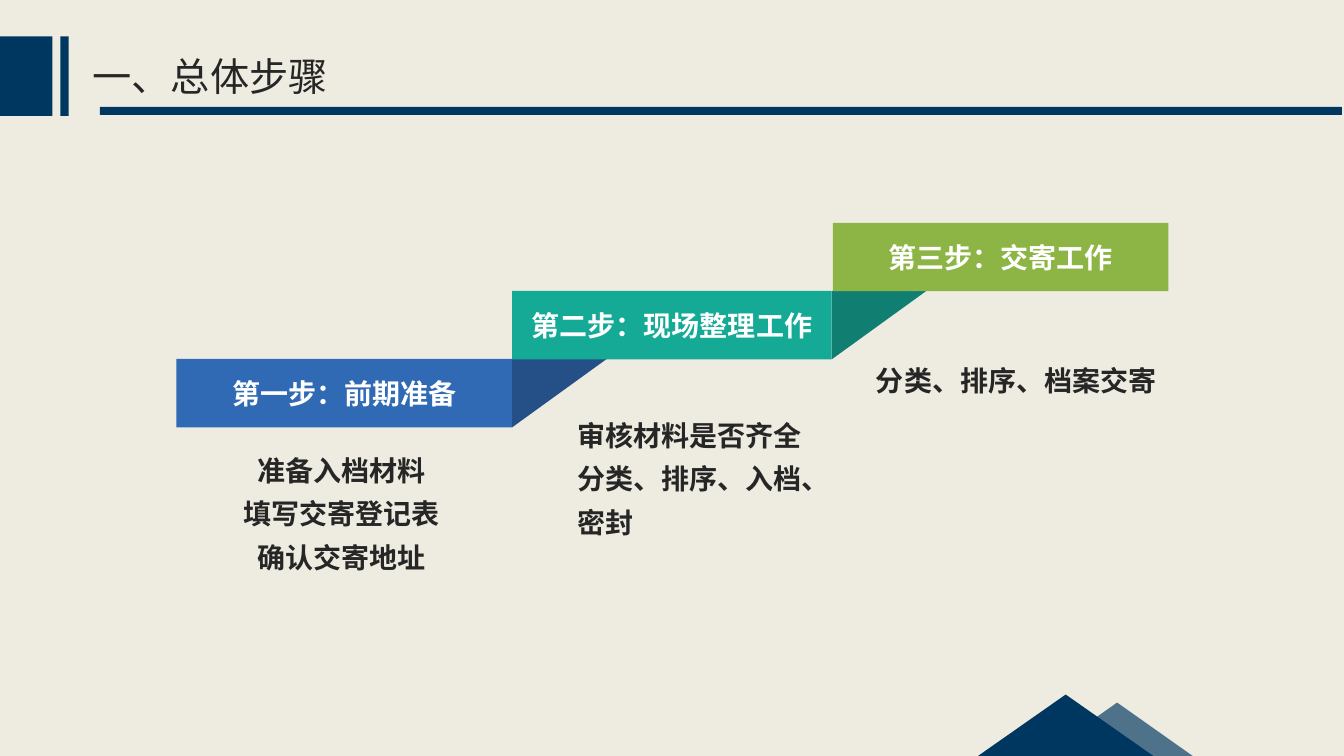
import pptx
import pptx.util
import pptx.dml.color
import pptx.enum.shapes
import pptx.enum.text
import pptx.oxml
import pptx.oxml.ns

Inches = pptx.util.Inches
Pt = pptx.util.Pt
SHAPE = pptx.enum.shapes.MSO_SHAPE
ALIGN = pptx.enum.text.PP_ALIGN
ANCHOR = pptx.enum.text.MSO_ANCHOR

COLORS = {
    "background": "EEECE1", "navy": "003760", "ink": "262626", "white": "FFFFFF",
    "blue": "3069B4", "blue_fold": "244F87",
    "teal": "15AA96", "teal_fold": "107F71", "green": "8DB545",
}
LATIN, CJK = "Arial", "Noto Sans CJK SC"

TITLE = "一、总体步骤"
HEADER_BARS = [(0, 0.36, 0.52, 0.79), (0.6, 0.36, 0.08, 0.79), (0.99, 1.06, 12.32, 0.08)]
STEPS = [
    {"heading": "第一步：前期准备", "font": CJK, "color": "blue", "fold": "blue_fold",
     "left": 1.75, "width": 3.33,
     "details": ["准备入档材料", "填写交寄登记表", "确认交寄地址"],
     "details_box": (2.27, 4.45, 2.23, 1.43), "details_font": LATIN, "align": ALIGN.CENTER},
    {"heading": "第二步：现场整理工作", "font": CJK, "color": "teal", "fold": "teal_fold",
     "left": 5.08, "width": 3.17,
     "details": ["审核材料是否齐全", "分类、排序、入档、", "密封"],
     "details_box": (5.63, 4.1, 2.45, 1.93), "details_font": CJK, "align": ALIGN.LEFT},
    {"heading": "第三步：交寄工作", "font": LATIN, "color": "green", "fold": None,
     "left": 8.26, "width": 3.33,
     "details": ["分类、排序、档案交寄"],
     "details_box": (8.59, 3.56, 3.23, 0.44), "details_font": CJK, "align": ALIGN.LEFT},
]
BANNER_HEIGHT, FOLD_WIDTH, FIRST_BANNER_TOP = 0.68, 0.94, 3.56
STEP_RISE = 0.675
MOUNTAINS = [((9.7, 6.89, 1.74, 0.61), 100), ((10.33, 6.97, 1.5, 0.53), 67)]


def rgb(name):
    return pptx.dml.color.RGBColor.from_string(COLORS[name])


def add_filled(slide, kind, box, color):
    shape = slide.shapes.add_shape(kind, *map(Inches, box))
    shape.shadow.inherit = False
    shape.fill.solid()
    shape.fill.fore_color.rgb = rgb(color)
    shape.line.fill.background()
    return shape


def write(frame, lines, font, size, color, bold=True, align=ALIGN.LEFT, gap=0):
    """Fill a text frame with one paragraph per line, spaced 1.2 times the size."""
    frame.word_wrap = True
    for index, line in enumerate(lines):
        paragraph = frame.paragraphs[0] if index == 0 else frame.add_paragraph()
        paragraph.text = line
        paragraph.alignment = align
        paragraph.line_spacing = Pt(size * 1.2)
        paragraph.space_after = Pt(gap)
        paragraph.font.name = font
        paragraph.font.size = Pt(size)
        paragraph.font.bold = bold
        paragraph.font.color.rgb = rgb(color)


def add_text(slide, box, *args, **options):
    write(slide.shapes.add_textbox(*map(Inches, box)).text_frame, *args, **options)


def add_step(slide, step, top):
    banner_box = (step["left"], top, step["width"], BANNER_HEIGHT)
    banner = add_filled(slide, SHAPE.RECTANGLE, banner_box, step["color"])
    banner.text_frame.vertical_anchor = ANCHOR.MIDDLE
    write(banner.text_frame, [step["heading"]], step["font"], 20, "white", align=ALIGN.CENTER)
    if step["fold"]:
        fold_box = (step["left"] + step["width"], top, FOLD_WIDTH, BANNER_HEIGHT)
        fold = add_filled(slide, SHAPE.RIGHT_TRIANGLE, fold_box, step["fold"])
        fold.element.spPr.find(pptx.oxml.ns.qn("a:xfrm")).set("flipV", "1")
    add_text(slide, step["details_box"], step["details"], step["details_font"], 20, "ink",
             align=step["align"], gap=7)


def add_mountain(slide, box, opacity):
    mountain = add_filled(slide, SHAPE.ISOSCELES_TRIANGLE, box, "navy")
    if opacity < 100:
        color = next(mountain.element.spPr.iter(pptx.oxml.ns.qn("a:srgbClr")))
        alpha = pptx.oxml.parse_xml(
            f'<a:alpha {pptx.oxml.ns.nsdecls("a")} val="{opacity * 1000}"/>')
        color.append(alpha)


def main():
    deck = pptx.Presentation()
    deck.slide_width, deck.slide_height = Inches(13.33), Inches(7.5)
    slide = deck.slides.add_slide(deck.slide_layouts[6])
    slide.background.fill.solid()
    slide.background.fill.fore_color.rgb = rgb("background")

    for bar in HEADER_BARS:
        add_filled(slide, SHAPE.RECTANGLE, bar, "navy")
    add_text(slide, (0.82, 0.47, 11.16, 0.57), [TITLE], LATIN, 28, "ink", bold=False)
    for index, step in enumerate(STEPS):
        add_step(slide, step, FIRST_BANNER_TOP - index * STEP_RISE)
    for box, opacity in MOUNTAINS:
        add_mountain(slide, box, opacity)
    deck.save("out.pptx")


if __name__ == "__main__":
    main()
